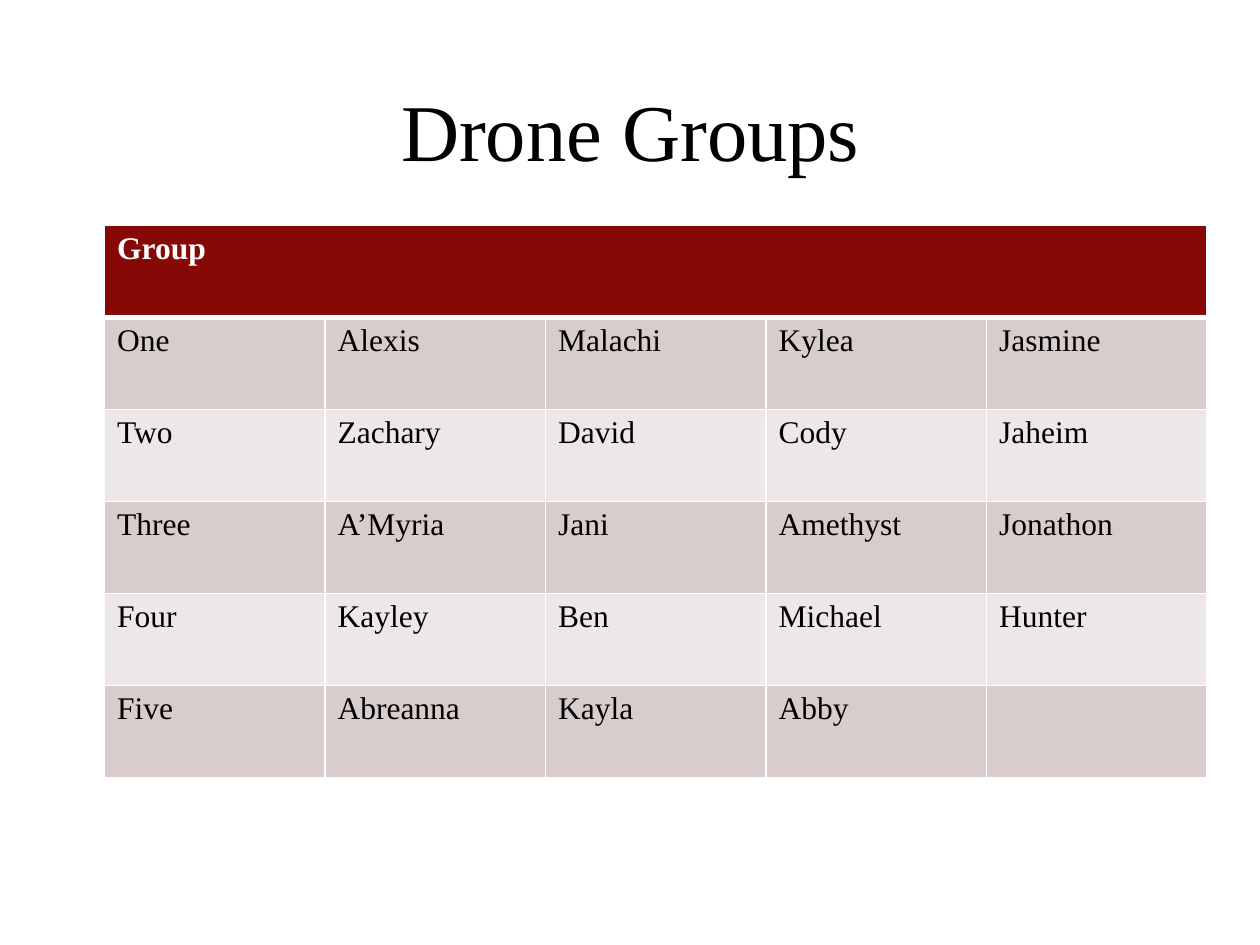
from dataclasses import dataclass
from lxml.etree import SubElement
from pptx import Presentation
from pptx.dml.color import RGBColor as Color
from pptx.enum.text import MSO_ANCHOR as Anchor, PP_ALIGN as Align
from pptx.oxml.ns import qn
from pptx.util import Inches, Pt


@dataclass(frozen=True)
class Theme:
    font: str = "Times New Roman"
    ink: str = "000000"
    paper: str = "FFFFFF"
    head: str = "860908"
    bands: tuple = ("D9CCCC", "EDE7E7")
    title: int = 46
    body: int = 18
    thin: int = 1
    thick: int = 3


class Deck:
    """Draws styled elements on the current slide, placed in inches."""

    def __init__(self, theme, width, height):
        self.theme = theme
        self.show = Presentation()
        self.show.slide_width = Inches(width)
        self.show.slide_height = Inches(height)
        self.slide = self.show.slides.add_slide(self.show.slide_layouts[6])

    def label(self, frame, text, size, color, bold=False):
        run = frame.paragraphs[0].add_run()
        run.text = text
        font = run.font
        font.name, font.size, font.bold = self.theme.font, Pt(size), bold
        font.color.rgb = Color.from_string(color)

    def title(self, text, *box):
        frame = self.slide.shapes.add_textbox(*map(Inches, box)).text_frame
        frame.word_wrap = True
        frame.vertical_anchor = Anchor.MIDDLE
        frame.paragraphs[0].alignment = Align.CENTER
        self.label(frame, text, self.theme.title, self.theme.ink)

    def edge(self, cell, side, width):
        line = SubElement(cell._tc.get_or_add_tcPr(), qn(f"a:ln{side}"), w=str(Pt(width)))
        fill = SubElement(line, qn("a:solidFill"))
        SubElement(fill, qn("a:srgbClr"), val=self.theme.paper)

    def cell(self, cell, text, row):
        theme = self.theme
        heavy = {(0, "B"), (1, "T")}
        for side in "LRTB":
            self.edge(cell, side, theme.thick if (row, side) in heavy else theme.thin)
        cell.fill.solid()
        back = theme.bands[(row - 1) % 2] if row else theme.head
        cell.fill.fore_color.rgb = Color.from_string(back)
        if text:
            color = theme.ink if row else theme.paper
            self.label(cell.text_frame, text, theme.body, color, not row)

    def table(self, head, rows, left, top, col, high):
        wide, tall = len(rows[0]), len(rows) + 1
        box = map(Inches, (left, top, col * wide, high * tall))
        table = self.slide.shapes.add_table(tall, wide, *box).table
        for part in table.columns:
            part.width = Inches(col)
        for part in table.rows:
            part.height = Inches(high)
        table.cell(0, 0).merge(table.cell(0, wide - 1))
        grid = [[head] + [""] * (wide - 1), *rows]
        for y, names in enumerate(grid):
            for x, name in enumerate(names):
                self.cell(table.cell(y, x), name, y)


def main():
    groups = [
        ["One", "Alexis", "Malachi", "Kylea", "Jasmine"],
        ["Two", "Zachary", "David", "Cody", "Jaheim"],
        ["Three", "A’Myria", "Jani", "Amethyst", "Jonathon"],
        ["Four", "Kayley", "Ben", "Michael", "Hunter"],
        ["Five", "Abreanna", "Kayla", "Abby", ""],
    ]
    deck = Deck(Theme(), 10, 7.5)
    deck.title("Drone Groups", 1, 0.55, 8, 0.95)
    deck.table("Group", groups, 0.83, 1.79, 1.75, 0.73)
    deck.show.save("out.pptx")


if __name__ == "__main__":
    main()
